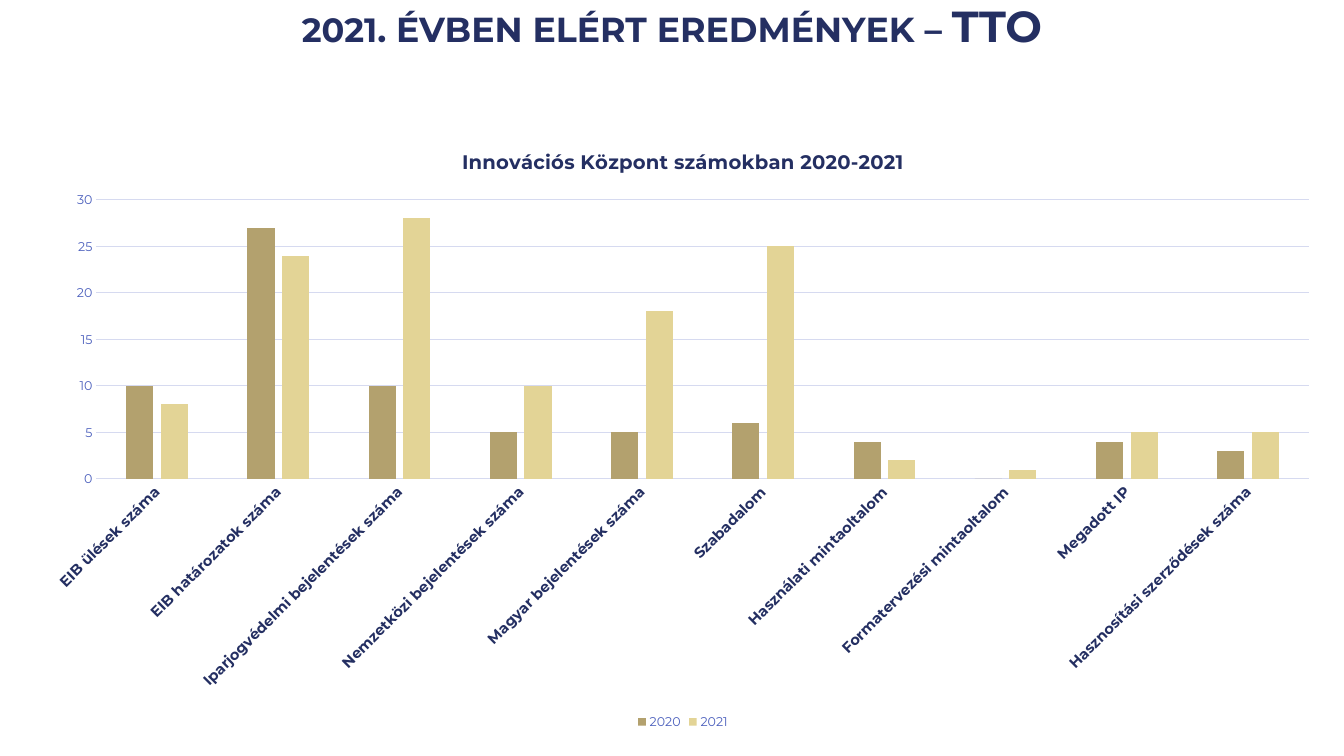
import pptx
import pptx.chart.data
import pptx.dml.color
import pptx.enum.chart
import pptx.enum.text
import pptx.oxml
import pptx.oxml.ns
import pptx.util
from pptx.util import Inches

RGBColor = pptx.dml.color.RGBColor
NAVY = RGBColor(0x24, 0x2F, 0x62)
BLUE = RGBColor(0x4C, 0x60, 0xBD)
PALE = RGBColor(0xD6, 0xDA, 0xF0)
BRONZE = RGBColor(0xB3, 0xA1, 0x6E)
SAND = RGBColor(0xE3, 0xD4, 0x96)
FACE = "Montserrat"

COUNTS = {
    "EIB ülések száma": (10, 8),
    "EIB határozatok száma": (27, 24),
    "Iparjogvédelmi bejelentések száma": (10, 28),
    "Nemzetközi bejelentések száma": (5, 10),
    "Magyar bejelentések száma": (5, 18),
    "Szabadalom": (6, 25),
    "Használati mintaoltalom": (4, 2),
    "Formatervezési mintaoltalom": (0, 1),
    "Megadott IP": (4, 5),
    "Hasznosítási szerződések száma": (3, 5),
}
YEARS = {"2020": BRONZE, "2021": SAND}
PLOT = {"x": 0.05, "y": 0.12, "w": 0.93, "h": 0.46}


def put(item, values):
    for name, value in values.items():
        setattr(item, name, value)


def style(font, size, color, bold=False):
    put(font, {"name": FACE, "size": pptx.util.Pt(size), "bold": bold})
    font.color.rgb = color


def rule(line):
    line.color.rgb = PALE
    line.width = pptx.util.Pt(0.75)


def add_title(slide):
    box = slide.shapes.add_textbox(0, 0, Inches(13.33), Inches(0.54))
    box.text_frame.word_wrap = True
    para = box.text_frame.paragraphs[0]
    put(para, {"alignment": pptx.enum.text.PP_ALIGN.CENTER, "line_spacing": 0.9})
    for text, size in (("2021", 30), (". évben elért eredmények – TTO", 31)):
        run = para.add_run()
        run.text = text
        style(run.font, size, NAVY, True)
        run.font._element.set("cap", "small")


def place_plot(chart):
    # Fix the inner plot area as fractions of the chart
    area = chart._chartSpace.chart.plotArea
    for old in area.findall(pptx.oxml.ns.qn("c:layout")):
        area.remove(old)
    modes = "".join(f'<c:{k}Mode val="edge"/>' for k in "xy")
    sizes = "".join(f'<c:{k} val="{v}"/>' for k, v in PLOT.items())
    area.insert(0, pptx.oxml.parse_xml(
        f'<c:layout {pptx.oxml.ns.nsdecls("c")}><c:manualLayout>'
        f'<c:layoutTarget val="inner"/>{modes}{sizes}'
        '</c:manualLayout></c:layout>'))


def style_axes(chart):
    none = pptx.enum.chart.XL_TICK_MARK.NONE
    cat, val = chart.category_axis, chart.value_axis
    for axis in (cat, val):
        put(axis, {"major_tick_mark": none, "minor_tick_mark": none})
    style(cat.tick_labels.font, 10.5, NAVY, True)
    rule(cat.format.line)
    # Slant the category names by 45 degrees
    body = cat._element.find(pptx.oxml.ns.qn("c:txPr")).bodyPr
    body.set("rot", "-2700000")
    body.set("vert", "horz")
    put(val, {"minimum_scale": 0, "maximum_scale": 30, "major_unit": 5})
    style(val.tick_labels.font, 9, BLUE)
    val.format.line.fill.background()
    rule(val.major_gridlines.format.line)


def add_bars(slide):
    data = pptx.chart.data.CategoryChartData()
    data.categories = list(COUNTS)
    for year, values in zip(YEARS, zip(*COUNTS.values())):
        data.add_series(year, values)
    chart = slide.shapes.add_chart(
        pptx.enum.chart.XL_CHART_TYPE.COLUMN_CLUSTERED,
        Inches(0.31), Inches(1.26), Inches(12.93), Inches(6.02), data).chart
    style(chart.font, 10, NAVY)

    # Heading
    frame = chart.chart_title.text_frame
    frame.text = "Innovációs Központ számokban 2020-2021"
    style(frame.paragraphs[0].runs[0].font, 14, NAVY, True)
    chart.chart_title.include_in_layout = False

    # Legend
    chart.has_legend = True
    put(chart.legend, {"include_in_layout": False,
                       "position": pptx.enum.chart.XL_LEGEND_POSITION.BOTTOM})
    style(chart.legend.font, 9, BLUE)

    # Columns
    plot = chart.plots[0]
    put(plot, {"gap_width": 219, "overlap": -27, "vary_by_categories": False})
    for series, color in zip(plot.series, YEARS.values()):
        series.format.fill.solid()
        series.format.fill.fore_color.rgb = color

    style_axes(chart)
    place_plot(chart)


def main():
    deck = pptx.Presentation()
    put(deck, {"slide_width": Inches(13.33), "slide_height": Inches(7.5)})
    slide = deck.slides.add_slide(deck.slide_layouts[6])
    add_bars(slide)
    add_title(slide)
    deck.save("out.pptx")


if __name__ == "__main__":
    main()
